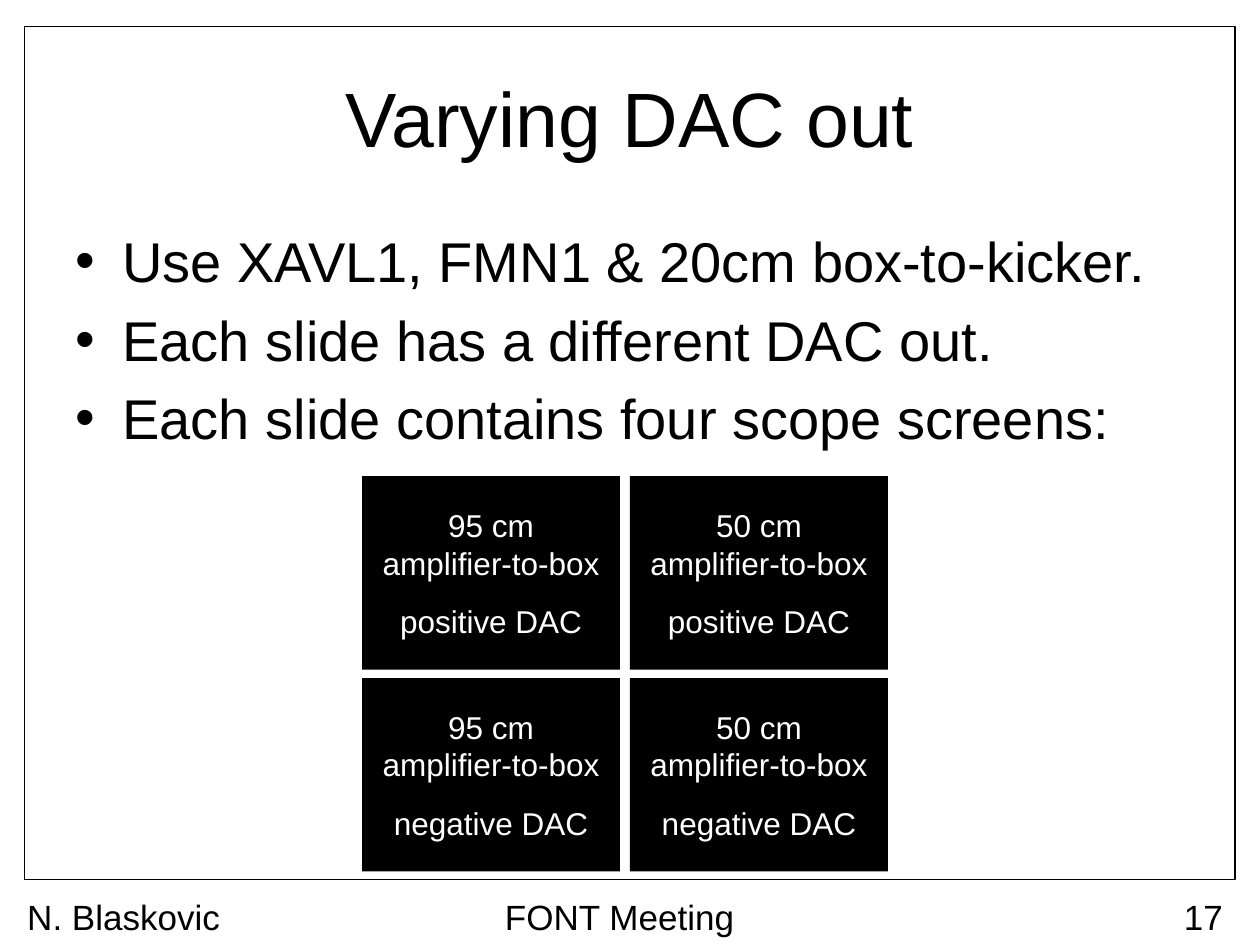
from lxml import etree
from pptx import Presentation, util as u
from pptx.dml.color import RGBColor
from pptx.enum import shapes, text
from pptx.oxml.ns import qn

COLOURS = {"ink": "000000", "screen": "000000", "screen_text": "FFFFFF"}
ALIGN = text.PP_ALIGN


def style(paragraph, size, colour, align):
    paragraph.alignment = align
    for run in paragraph.runs:
        run.font.name = "Arial"
        run.font.size = u.Pt(size)
        run.font.color.rgb = RGBColor.from_string(COLOURS[colour])


def add_label(box, wording, size, align, anchor=text.MSO_ANCHOR.TOP):
    """Add a text box, one paragraph per line of wording."""
    frame = slide.shapes.add_textbox(*(u.Cm(n) for n in box)).text_frame
    frame.word_wrap = True
    frame.vertical_anchor = anchor
    frame.text = wording
    for paragraph in frame.paragraphs:
        style(paragraph, size, "ink", align)
    return frame


deck = Presentation()
deck.slide_width, deck.slide_height = u.Cm(25.4), u.Cm(19.05)
slide = deck.slides.add_slide(deck.slide_layouts[6])

# Border around the content
border = slide.shapes.add_shape(
    shapes.MSO_SHAPE.RECTANGLE, u.Cm(0.5), u.Cm(0.53), u.Cm(24.4), u.Cm(17.2))
border.shadow.inherit = False
border.fill.background()
border.line.color.rgb = RGBColor.from_string(COLOURS["ink"])
border.line.width = u.Pt(0.75)

add_label((1.27, 0.76, 22.86, 3.18), "Varying DAC out", 44, ALIGN.CENTER,
          text.MSO_ANCHOR.MIDDLE)

# Bulleted explanation
points = add_label(
    (1.27, 4.45, 22.86, 12.57),
    "Use XAVL1, FMN1 & 20cm box-to-kicker.\n"
    "Each slide has a different DAC out.\n"
    "Each slide contains four scope screens:", 32, ALIGN.LEFT)
for index, point in enumerate(points.paragraphs):
    if index:
        point.space_before = u.Pt(6.4)
    properties = point._p.get_or_add_pPr()
    properties.set("marL", str(u.Cm(0.95)))
    properties.set("indent", str(u.Cm(-0.95)))
    etree.SubElement(properties, qn("a:buFont"), typeface="Arial")
    etree.SubElement(properties, qn("a:buChar"), char="•")

# Footer
for left, width, wording, align in (
        (3.89, 17.2, "FONT Meeting", ALIGN.CENTER),
        (23.5, 1.4, "17", ALIGN.RIGHT),
        (0.3, 4.4, "N. Blaskovic", ALIGN.LEFT)):
    add_label((left, 17.93, width, 0.81), wording, 20, align)

# Scope screens: cable length across, DAC sign down
for row, sign in enumerate(("positive", "negative")):
    for column, length in enumerate(("95 cm", "50 cm")):
        screen = slide.shapes.add_shape(
            shapes.MSO_SHAPE.RECTANGLE,
            u.Cm(7.3 + 5.4 * column), u.Cm(9.6 + 4.07 * row),
            u.Cm(5.2), u.Cm(3.9))
        screen.shadow.inherit = False
        screen.fill.solid()
        screen.fill.fore_color.rgb = RGBColor.from_string(COLOURS["screen"])
        screen.line.fill.background()
        caption = screen.text_frame
        caption.word_wrap = True
        caption.vertical_anchor = text.MSO_ANCHOR.MIDDLE
        caption.text = f"{length}\vamplifier-to-box\n{sign} DAC"
        for paragraph in caption.paragraphs:
            style(paragraph, 18, "screen_text", ALIGN.CENTER)
            paragraph.space_after = u.Pt(12)

deck.save("out.pptx")
